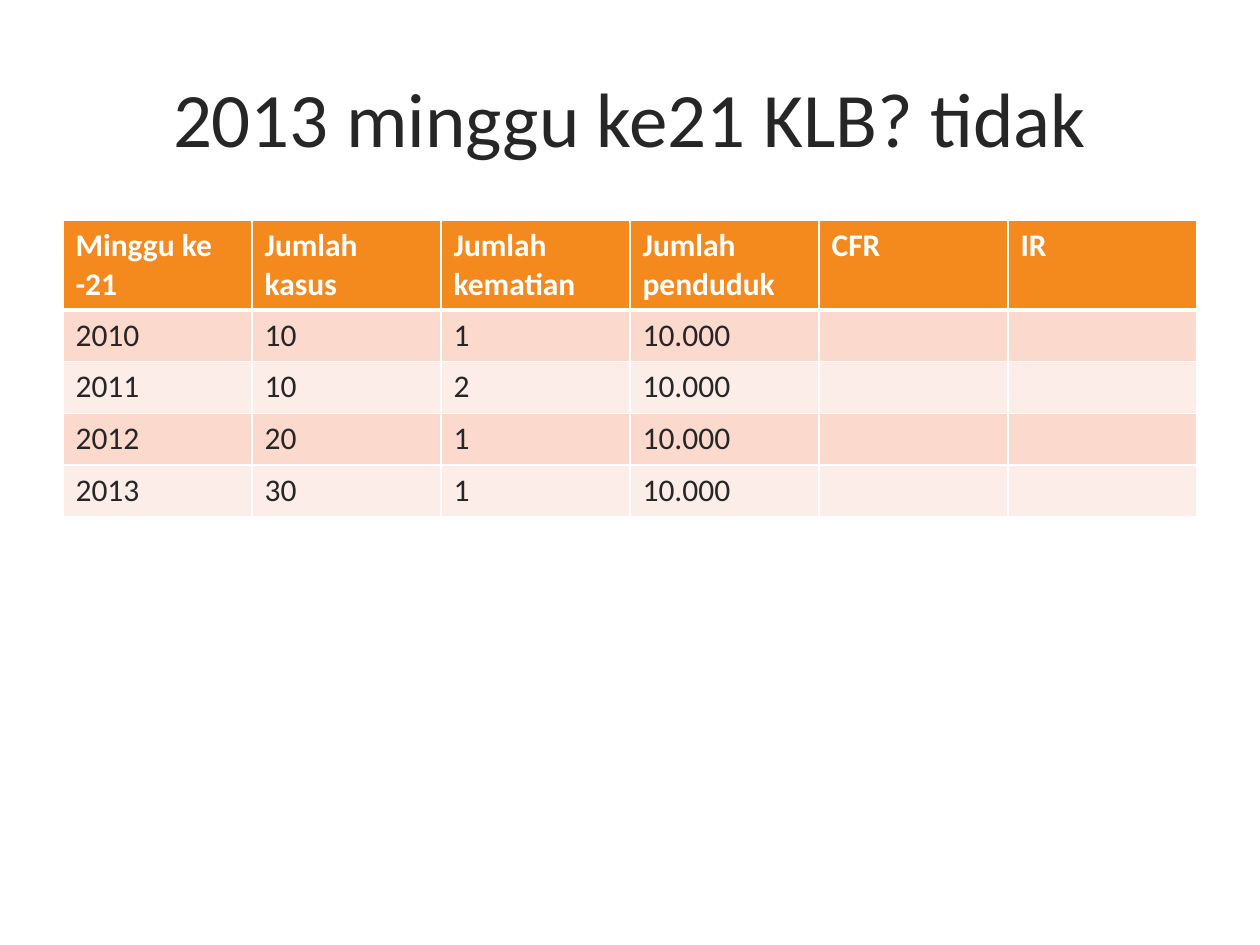
from lxml.etree import SubElement
from pptx import Presentation
from pptx.dml.color import RGBColor
from pptx.enum.text import MSO_ANCHOR, PP_ALIGN
from pptx.oxml.ns import qn
from pptx.util import Inches, Pt

TITLE = "2013 minggu ke21 KLB? tidak"
ROWS = [
    ["Minggu ke -21", "Jumlah kasus", "Jumlah kematian", "Jumlah penduduk", "CFR", "IR"],
    ["2010", "10", "1", "10.000", "", ""],
    ["2011", "10", "2", "10.000", "", ""],
    ["2012", "20", "1", "10.000", "", ""],
    ["2013", "30", "1", "10.000", "", ""],
]
COLORS = {
    "white": "FFFFFF",
    "text": "262626",
    "header": "F4891E",
    "odd": "FBDACD",
    "even": "FDEDE8",
}
FONT = "Calibri"
LEFT, WIDTH = 0.5, 9
TABLE_TOP = 1.75
HEADER_HEIGHT, ROW_HEIGHT = 0.7, 0.41


def color(name):
    return RGBColor.from_string(COLORS[name])


def format_font(font, size, color_name, bold=False):
    for key, value in {"name": FONT, "size": Pt(size), "bold": bold}.items():
        setattr(font, key, value)
    font.color.rgb = color(color_name)


def add_borders(cell, widths):
    """Draw white borders; widths maps the sides L, R, T, B to points."""
    properties = cell._tc.get_or_add_tcPr()
    for side, width in widths.items():
        line = SubElement(properties, qn(f"a:ln{side}"), w=str(Pt(width)))
        fill = SubElement(line, qn("a:solidFill"))
        SubElement(fill, qn("a:srgbClr"), val=COLORS["white"])


def add_title(slide):
    title = slide.shapes.title
    box = {"left": LEFT, "top": 0.3, "width": WIDTH, "height": 1.25}
    for key, value in box.items():
        setattr(title, key, Inches(value))
    title.text_frame.text = TITLE
    title.text_frame.vertical_anchor = MSO_ANCHOR.MIDDLE
    paragraph = title.text_frame.paragraphs[0]
    paragraph.alignment = PP_ALIGN.CENTER
    format_font(paragraph.runs[0].font, 44, "text")


def add_case_table(slide):
    heights = [HEADER_HEIGHT] + [ROW_HEIGHT] * (len(ROWS) - 1)
    table = slide.shapes.add_table(
        len(ROWS), len(ROWS[0]), Inches(LEFT), Inches(TABLE_TOP),
        Inches(WIDTH), Inches(sum(heights))).table
    for row_index, values in enumerate(ROWS):
        table.rows[row_index].height = Inches(heights[row_index])
        is_header = row_index == 0
        fill_name = "header" if is_header else "odd" if row_index % 2 else "even"
        widths = {"L": 1, "R": 1, "T": 3 if row_index == 1 else 1, "B": 3 if is_header else 1}
        for column_index, value in enumerate(values):
            cell = table.cell(row_index, column_index)
            cell.text = value
            format_font(cell.text_frame.paragraphs[0].font, 18,
                        "white" if is_header else "text", is_header)
            add_borders(cell, widths)
            cell.fill.solid()
            cell.fill.fore_color.rgb = color(fill_name)


def main():
    presentation = Presentation()
    presentation.slide_width = Inches(10)
    presentation.slide_height = Inches(7.5)
    slide = presentation.slides.add_slide(presentation.slide_layouts[5])
    add_title(slide)
    add_case_table(slide)
    presentation.save("out.pptx")


if __name__ == "__main__":
    main()
